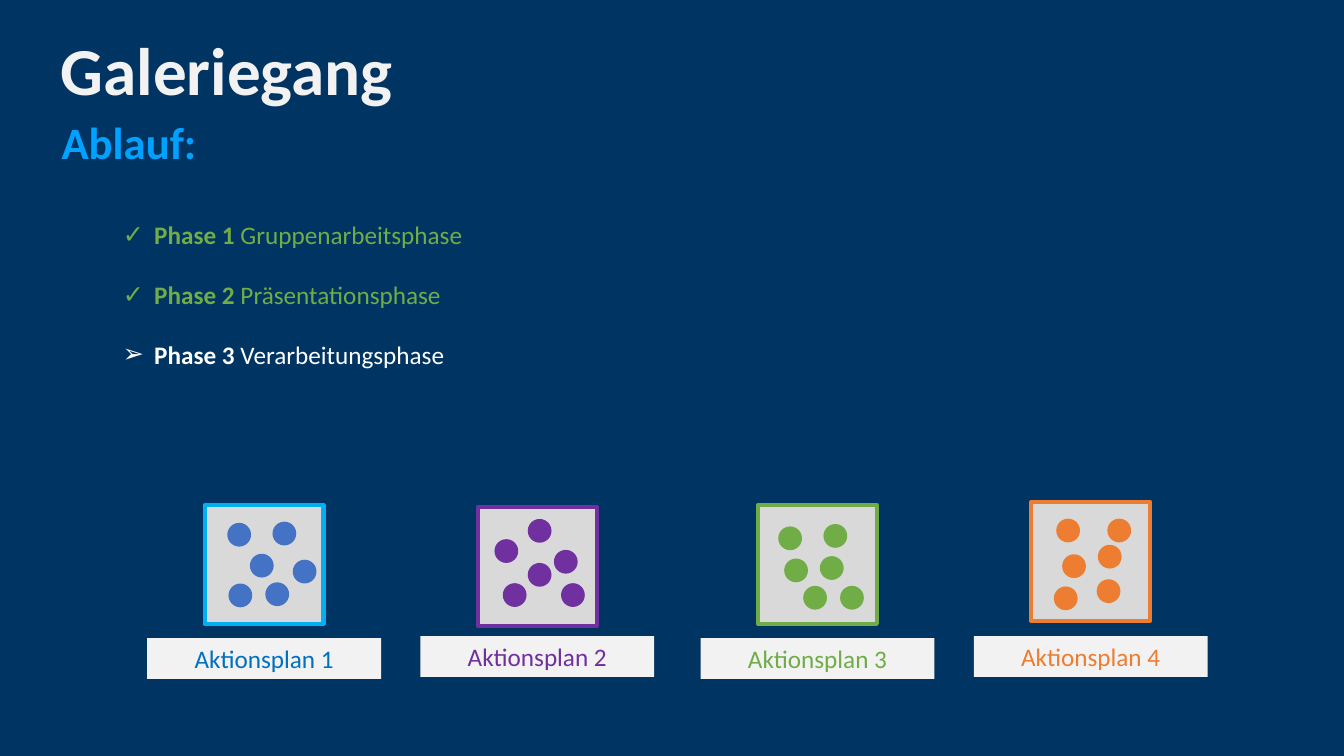
from dataclasses import dataclass

from lxml.etree import SubElement
from pptx import Presentation
from pptx.dml.color import RGBColor
from pptx.enum.shapes import MSO_SHAPE as Preset
from pptx.enum.text import MSO_ANCHOR as Anchor, MSO_AUTO_SIZE as AutoSize, PP_ALIGN as Align
from pptx.oxml.ns import qn
from pptx.util import Inches, Pt

SLIDE_W, SLIDE_H = Inches(13.333), Inches(7.5)
FONT = "Calibri"
NAVY, SKY, PALE, GREY, WHITE = "003462", "01A2FF", "F2F2F2", "D9D9D9", "FFFFFF"
GREEN, VIOLET, ORANGE = "70AD47", "7030A0", "ED7D31"


@dataclass(frozen=True)
class Phase:
    bullet: str
    name: str
    content: str
    color: str


@dataclass(frozen=True)
class Plan:
    """Board and label places in % of the slide, dots in % of the board's side."""
    name: str
    left: float
    top: float
    label_top: float
    frame: str
    dot: str
    label: str
    dots: tuple[tuple[int, int], ...]


PHASES = (
    Phase("✓", "Phase 1 ", "Gruppenarbeitsphase", GREEN),
    Phase("✓", "Phase 2 ", "Präsentationsphase", GREEN),
    Phase("➢", "Phase 3 ", "Verarbeitungsphase", WHITE),
)
PLANS = (
    Plan("Aktionsplan 1", 15.23, 66.8, 84.4, "00B0F0", "4472C4", "0070C0",
         ((57, 14), (74, 46), (19, 15), (38, 41), (20, 66), (51, 65))),
    Plan("Aktionsplan 2", 35.55, 67.07, 84.13, VIOLET, VIOLET, VIOLET,
         ((42, 10), (70, 64), (14, 27), (42, 47), (21, 64), (64, 36))),
    Plan("Aktionsplan 3", 56.4, 66.8, 84.4, GREEN, GREEN, GREEN,
         ((55, 16), (69, 68), (17, 18), (52, 43), (38, 68), (22, 45))),
    Plan("Aktionsplan 4", 76.73, 66.4, 84.13, ORANGE, ORANGE, ORANGE,
         ((21, 14), (26, 44), (64, 14), (56, 36), (55, 65), (19, 71))),
)


def across(percent: float) -> int:
    return round(SLIDE_W * percent / 100)


def down(percent: float) -> int:
    return round(SLIDE_H * percent / 100)


BOARD = across(8.85)
DOT = round(BOARD * 0.2)
LABEL_W, LABEL_H = across(17.4), down(5.4)


def paint(color_format, color: str) -> None:
    color_format.rgb = RGBColor.from_string(color)


def add_run(paragraph, text: str, size: int, color: str, bold: bool = False) -> None:
    run = paragraph.add_run()
    run.text = text
    run.font.name, run.font.size, run.font.bold = FONT, Pt(size), bold
    paint(run.font.color, color)


def set_bullet(paragraph, bullet: str = "", indent: float = 0, hang: float = 0) -> None:
    """Set the indents in inches and the bullet; an empty one removes the layout's."""
    properties = paragraph._p.get_or_add_pPr()
    properties.set("marL", str(Inches(indent)))
    properties.set("indent", str(-Inches(hang)))
    if bullet:
        SubElement(properties, qn("a:buChar")).set("char", bullet)
    else:
        SubElement(properties, qn("a:buNone"))


def place(placeholder, left: float, top: float, width: float, height: float, anchor: Anchor):
    """Move a placeholder to shares of the slide and return its text frame."""
    placeholder.left, placeholder.top = across(left), down(top)
    placeholder.width, placeholder.height = across(width), down(height)
    frame = placeholder.text_frame
    frame.word_wrap, frame.auto_size, frame.vertical_anchor = True, AutoSize.NONE, anchor
    return frame


def add_filled(group, preset: Preset, left: int, top: int, width: int, height: int, fill: str):
    shape = group.shapes.add_shape(preset, left, top, width, height)
    shape.shadow.inherit = False
    shape.fill.solid()
    paint(shape.fill.fore_color, fill)
    shape.line.fill.background()
    return shape


def add_plan(slide, plan: Plan) -> None:
    group = slide.shapes.add_group_shape()
    left, top = across(plan.left), down(plan.top)
    board = add_filled(group, Preset.RECTANGLE, left, top, BOARD, BOARD, GREY)
    paint(board.line.color, plan.frame)
    board.line.width = Pt(3)
    for x, y in plan.dots:
        add_filled(group, Preset.OVAL, left + BOARD * x // 100, top + BOARD * y // 100,
                   DOT, DOT, plan.dot)
    label = add_filled(group, Preset.RECTANGLE, left - (LABEL_W - BOARD) // 2,
                       down(plan.label_top), LABEL_W, LABEL_H, PALE)
    label.text_frame.vertical_anchor = Anchor.MIDDLE
    caption = label.text_frame.paragraphs[0]
    caption.alignment = Align.CENTER
    add_run(caption, plan.name, 18, plan.label)


def add_phases(frame) -> None:
    frame.margin_top = down(4.93)
    for number, phase in enumerate(PHASES):
        line = frame.add_paragraph() if number else frame.paragraphs[0]
        line.level = 1
        line.line_spacing, line.space_before, line.space_after = 1.0, Pt(0), Pt(21)
        set_bullet(line, phase.bullet, 0.81, 0.31)
        add_run(line, phase.name, 18, phase.color, bold=True)
        add_run(line, phase.content, 18, phase.color)


def main() -> None:
    deck = Presentation()
    deck.slide_width, deck.slide_height = SLIDE_W, SLIDE_H
    slide = deck.slides.add_slide(deck.slide_layouts.get_by_name("Two Content"))
    slide.background.fill.solid()
    paint(slide.background.fill.fore_color, NAVY)
    title, subtitle, phases = list(slide.placeholders)[:3]

    heading = place(title, 1.73, -2.13, 30.3, 17.33, Anchor.BOTTOM).paragraphs[0]
    heading.alignment, heading.line_spacing = Align.CENTER, 0.9
    add_run(heading, "Galeriegang", 48, PALE, bold=True)

    agenda = place(subtitle, 3.83, 15.87, 20.48, 7.6, Anchor.TOP).paragraphs[0]
    agenda.alignment, agenda.line_spacing, agenda.space_before = Align.LEFT, 0.8, Pt(10)
    set_bullet(agenda)
    add_run(agenda, "Ablauf:", 32, SKY, bold=True)

    add_phases(place(phases, 4.65, 24.13, 89.4, 25.6, Anchor.TOP))
    for plan in PLANS:
        add_plan(slide, plan)
    deck.save("out.pptx")


if __name__ == "__main__":
    main()
